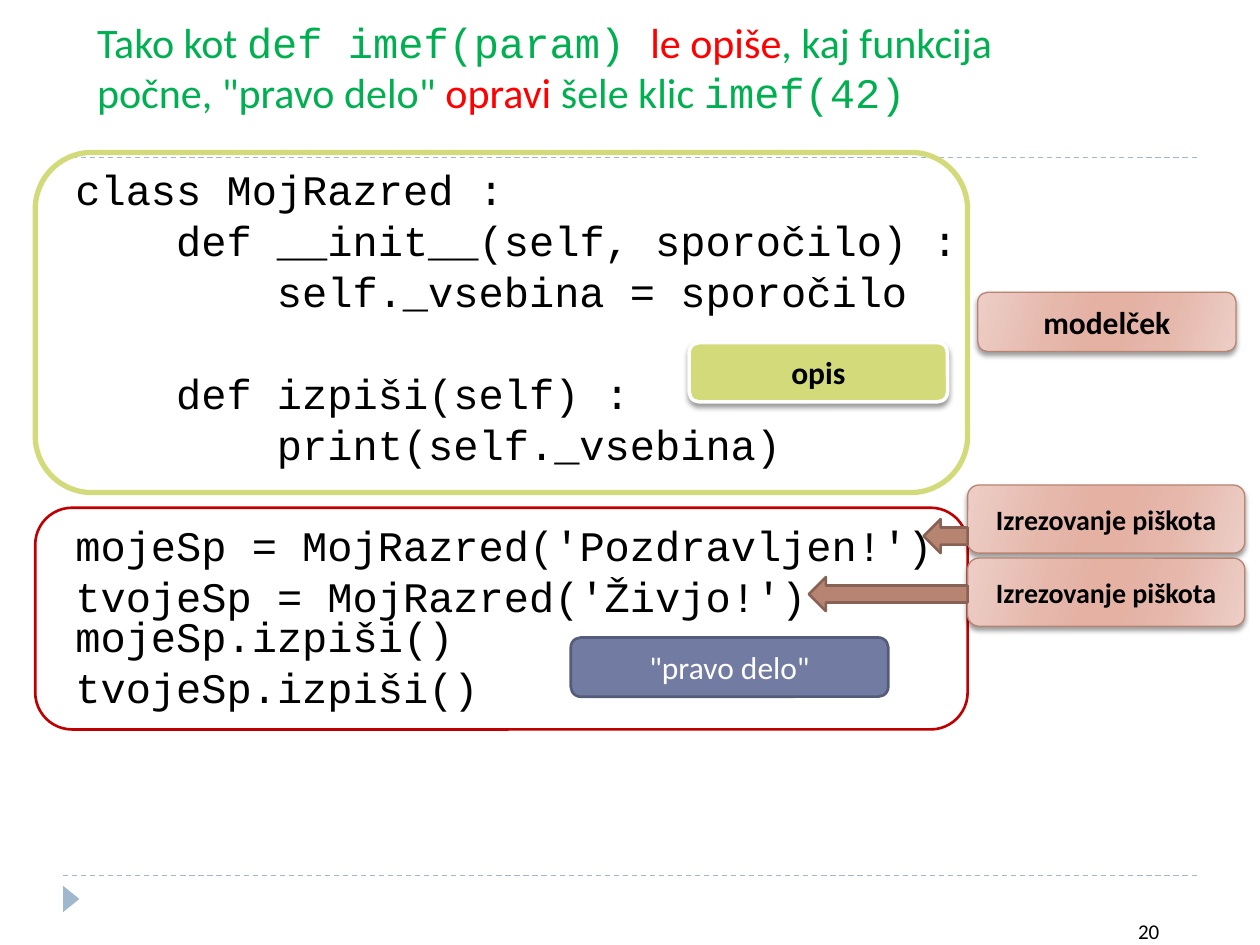
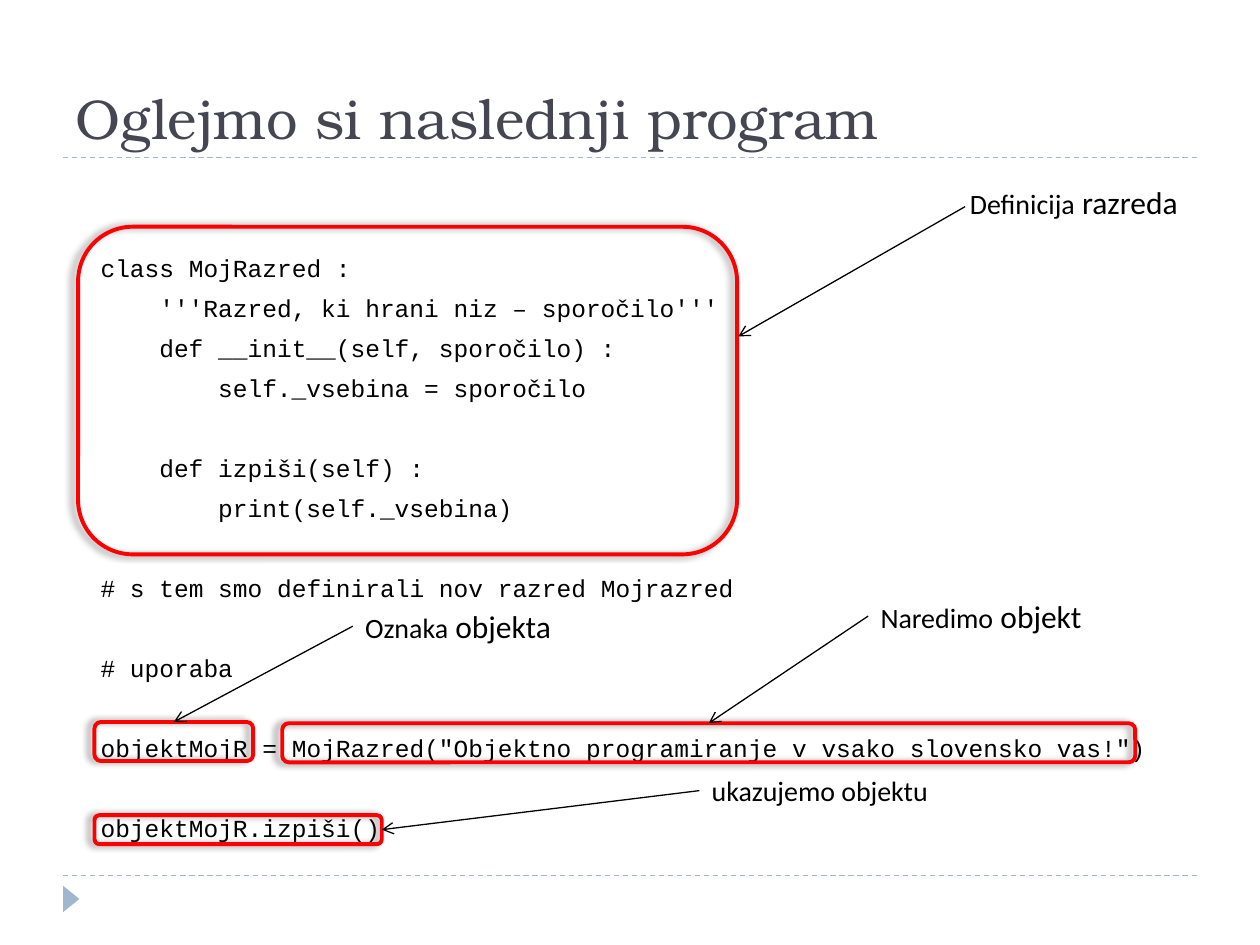
from lxml.etree import SubElement
from pptx import Presentation
from pptx.dml.color import RGBColor
from pptx.enum.dml import MSO_LINE
from pptx.enum.shapes import MSO_CONNECTOR, MSO_SHAPE as Shape
from pptx.enum.text import MSO_ANCHOR as Anchor, MSO_AUTO_SIZE as AutoSize, PP_ALIGN as Align
from pptx.oxml.ns import qn
from pptx.util import Inches, Pt

# The slide is a grid of 100 columns and 75 rows with square cells.
CELL = Inches(10) // 100
COLUMNS, ROWS = 100, 75

BODY, MONO, SERIF = "Calibri", "Courier New", "TeX Gyre Bonum"
BLACK, WHITE, RED, GREEN = "000000", "FFFFFF", "FF0000", "00B050"
SLATE, MIST, LIME, CRIMSON = "464653", "9FB8CD", "D2DA7A", "C00000"
INDIGO, INDIGO_EDGE, CLAY, CLAY_EDGE = "727CA3", "545C79", "B88472", "886254"
ROSE = [(0, "ECCEC6"), (30, "E6B8AC"), (45, "E4B1A3"),
        (55, "E4B1A3"), (73, "E6B8AC"), (100, "ECCEC6")]
ROSE_ANGLE = 344

# Shadows: blur, distance (points) and direction (degrees)
DROP = (3, 2, 90)
SIDE = (4, 3, 180)


def rgb(hex_code):
    return RGBColor.from_string(hex_code)


def cells(*lengths):
    return [round(length * CELL) for length in lengths]


def inside(box, left, top, width, height):
    return box[0] + left, box[1] + top, width, height


# ---- Text ----

def write(frame, paragraphs, size=18, font=BODY, color=BLACK, bold=False,
          align=Align.LEFT, anchor=Anchor.TOP, line=None):
    """Each paragraph is (space before, indent in cells, runs); a run is (text, overrides)."""
    frame.word_wrap = True
    frame.auto_size = AutoSize.NONE
    frame.vertical_anchor = anchor
    for index, (before, indent, runs) in enumerate(paragraphs):
        paragraph = frame.add_paragraph() if index else frame.paragraphs[0]
        paragraph.alignment = align
        paragraph.space_before = Pt(before)
        if line:
            paragraph.line_spacing = Pt(line)
        if indent:
            paragraph._p.get_or_add_pPr().set("marL", str(round(indent * CELL)))
        for text, changes in runs:
            if text == "\v":
                paragraph.add_line_break()
                continue
            look = {"size": size, "font": font, "color": color, **changes}
            run = paragraph.add_run()
            run.text = text
            run.font.size = Pt(look["size"])
            run.font.name = look["font"]
            run.font.bold = bold
            run.font.color.rgb = rgb(look["color"])


def textbox(slide, box, runs, **look):
    label = slide.shapes.add_textbox(*cells(*box))
    write(label.text_frame, [(0, 0, runs)], **look)
    return label


def code(slide, box, source, size, line):
    """Leading spaces become indents, and empty lines become paragraph spacing."""
    gap, paragraphs = 0, []
    for statement in source.strip().split("\n"):
        text = statement.lstrip()
        if not text:
            gap += line + 6
            continue
        # A fixed-pitch character is 0.6 em wide
        indent = (len(statement) - len(text)) * size * 0.6 / 7.2
        runs = []
        for part in text.split("\v"):
            runs += [("\v", {})] if runs else []
            runs.append((part, {}))
        paragraphs.append((gap + 6 if paragraphs else 0, indent, runs))
        gap = 0
    listing = slide.shapes.add_textbox(*cells(*box))
    write(listing.text_frame, paragraphs, size=size, font=MONO, line=line)


def heading(slide, box, runs, **look):
    title = slide.shapes.title
    title.left, title.top, title.width, title.height = cells(*box)
    write(title.text_frame, [(0, 0, runs)], **look)


# ---- Shapes ----

def panel(slide, kind, box, fill=None, edge=None, weight=1.5, shadow=None, text="", **look):
    part = slide.shapes.add_shape(kind, *cells(*box))
    if fill is None:
        part.fill.background()
    elif isinstance(fill, str):
        part.fill.solid()
        part.fill.fore_color.rgb = rgb(fill)
    else:
        part.fill.gradient()
        part.fill.gradient_angle = ROSE_ANGLE
        stops = next(part._element.spPr.iter(qn("a:gsLst")))
        stops[:] = []
        for position, shade in fill:
            stop = SubElement(stops, qn("a:gs"), pos=str(position * 1000))
            SubElement(stop, qn("a:srgbClr"), val=shade)
    if edge:
        part.line.color.rgb = rgb(edge)
        part.line.width = Pt(weight)
    else:
        part.line.fill.background()
    part.shadow.inherit = False
    if shadow:
        blur, distance, angle = shadow
        effects = part._element.spPr.find(qn("a:effectLst"))
        outer = SubElement(effects, qn("a:outerShdw"), blurRad=str(Pt(blur)),
                           dist=str(Pt(distance)), dir=str(angle * 60000), rotWithShape="0")
        tint = SubElement(outer, qn("a:srgbClr"), val=BLACK)
        SubElement(tint, qn("a:alpha"), val="40000")
    if text:
        write(part.text_frame, [(0, 0, [(text, {})])],
              align=Align.CENTER, anchor=Anchor.MIDDLE, **look)
    return part


def rule(slide, start, end, color=BLACK, dashed=False, arrow=False):
    connector = slide.shapes.add_connector(MSO_CONNECTOR.STRAIGHT, *cells(*start, *end))
    connector.line.color.rgb = rgb(color)
    connector.line.width = Pt(0.75)
    if dashed:
        connector.line.dash_style = MSO_LINE.DASH
    properties = connector._element.spPr
    if arrow:
        SubElement(properties.find(qn("a:ln")), qn("a:tailEnd"), type="arrow")
    SubElement(properties, qn("a:effectLst"))
    return connector


def new_slide(deck):
    """Title-only slide with the shared dashed rules and corner marker."""
    slide = deck.slides.add_slide(deck.slide_layouts[5])
    for row in (69.5, 12.5):
        rule(slide, (5, row), (COLUMNS - 5, row), MIST, dashed=True)
    marker = panel(slide, Shape.ISOSCELES_TRIANGLE, (4.6, 70.7, 2.1, 1.3), MIST)
    marker.rotation = 90
    return slide


# ---- Slide 1: description and real work ----

CLASS_SOURCE = """
class MojRazred :
    def __init__(self, sporočilo) :
        self._vsebina = sporočilo

    def izpiši(self) :
        print(self._vsebina)
"""
CALLS_SOURCE = """
mojeSp = MojRazred('Pozdravljen!')
tvojeSp = MojRazred('Živjo!')\vmojeSp.izpiši()
tvojeSp.izpiši()
"""


def framed_code(slide, box, source, edge, weight):
    code(slide, inside(box, 2.2, 1.2, 90, box[3] - 1.2), source, 24, 23.1)
    panel(slide, Shape.ROUNDED_RECTANGLE, box, edge=edge, weight=weight)


def class_region(slide, box):
    framed_code(slide, box, CLASS_SOURCE, LIME, 3)
    panel(slide, Shape.ROUNDED_RECTANGLE, inside(box, 51.9, 15.1, 20.5, 4.7),
          LIME, WHITE, 2, DROP, "opis", bold=True)
    panel(slide, Shape.ROUNDED_RECTANGLE, inside(box, 74.8, 11.1, 20.5, 4.7),
          ROSE, CLAY, 0.75, DROP, "modelček", bold=True)


def calls_region(slide, box):
    framed_code(slide, box, CALLS_SOURCE, CRIMSON, 1.5)
    panel(slide, Shape.ROUNDED_RECTANGLE, inside(box, 42.5, 10.3, 25.2, 4.7),
          INDIGO, INDIGO_EDGE, text='"pravo delo"', color=WHITE)
    # Cookie-cutter labels touch the frame's right side, arrows lead back to the code
    right = box[2]
    for top, arrow_top, length in ((-1.8, 0.9, 3.5), (4, 5.5, 12.6)):
        panel(slide, Shape.ROUNDED_RECTANGLE, inside(box, right, top, 22, 5.4),
              ROSE, CLAY, 0.75, DROP, "Izrezovanje piškota", size=16, bold=True)
        panel(slide, Shape.LEFT_ARROW, inside(box, right - length, arrow_top, length, 2.7),
              CLAY, CLAY_EDGE)


def description_slide(deck):
    slide = new_slide(deck)
    mono, red = {"font": MONO}, {"color": RED}
    heading(slide, (6.7, 0.8, 81.1, 9.1), [
        ("Tako kot ", {}), ("def imef(param) ", mono), ("le opiše", red),
        (', kaj funkcija počne, "pravo delo" ', {}), ("opravi ", red),
        ("šele klic ", {}), ("imef(42)", mono)], size=24, color=GREEN)
    class_region(slide, (2.8, 12.1, 74, 27))
    calls_region(slide, (2.8, 40.3, 74, 17.6))
    textbox(slide, (71.3, 72.4, 21.7, 2.6), [("20", {})], size=12, align=Align.RIGHT)


# ---- Slide 2: annotated program ----

PROGRAM = """
class MojRazred :
    '''Razred, ki hrani niz – sporočilo'''
    def __init__(self, sporočilo) :
        self._vsebina = sporočilo

    def izpiši(self) :
        print(self._vsebina)

# s tem smo definirali nov razred Mojrazred

# uporaba

objektMojR = MojRazred("Objektno programiranje v vsako slovensko vas!")

objektMojR.izpiši()
"""


def highlight(slide, box):
    return panel(slide, Shape.ROUNDED_RECTANGLE, box, edge=RED, weight=2.25, shadow=SIDE)


def note(slide, box, lead, term=""):
    runs = [(lead, {"size": 16})] + ([(term, {})] if term else [])
    return textbox(slide, box, runs)


def annotated_program(slide, box):
    code(slide, box, PROGRAM, 14, 16.86)
    # Class definition: its arrow meets the frame above the middle
    highlight(slide, inside(box, -0.8, -1.6, 52.3, 26))
    note(slide, inside(box, 69, -5.6, 27.3, 4), "Definicija", " razreda")
    rule(slide, inside(box, 69.6, -3.2, 0, 0)[:2], inside(box, 51.6, 7.1, 0, 0)[:2], arrow=True)
    # Notes joined to the side (0 top, 3 right) of the code they explain
    for target, site, place, lead, term in (
            ((0.5, 37.7, 12.6, 3.1), 0, (21, 28.1, 27.3, 4), "Oznaka", " objekta"),
            ((15.4, 37.8, 67.7, 3.1), 0, (61.9, 27.3, 27.3, 4), "Naredimo", " objekt"),
            ((0.5, 45.1, 22.8, 2.3), 3, (48.5, 41.3, 27.3, 3.7), "ukazujemo objektu", "")):
        frame = highlight(slide, inside(box, *target))
        label = note(slide, inside(box, *place), lead, term)
        arrow = rule(slide, (0, 0), (1, 1), arrow=True)
        arrow.begin_connect(label, 1)
        arrow.end_connect(frame, site)


def program_slide(deck):
    slide = new_slide(deck)
    heading(slide, (5, 1.7, 90, 10.8), [("Oglejmo si naslednji program", {})],
            size=32, font=SERIF, color=SLATE, anchor=Anchor.BOTTOM)
    annotated_program(slide, (7, 19.6, 90, 47.7))


def main():
    deck = Presentation()
    deck.slide_width, deck.slide_height = cells(COLUMNS, ROWS)
    description_slide(deck)
    program_slide(deck)
    deck.save("out.pptx")


if __name__ == "__main__":
    main()
